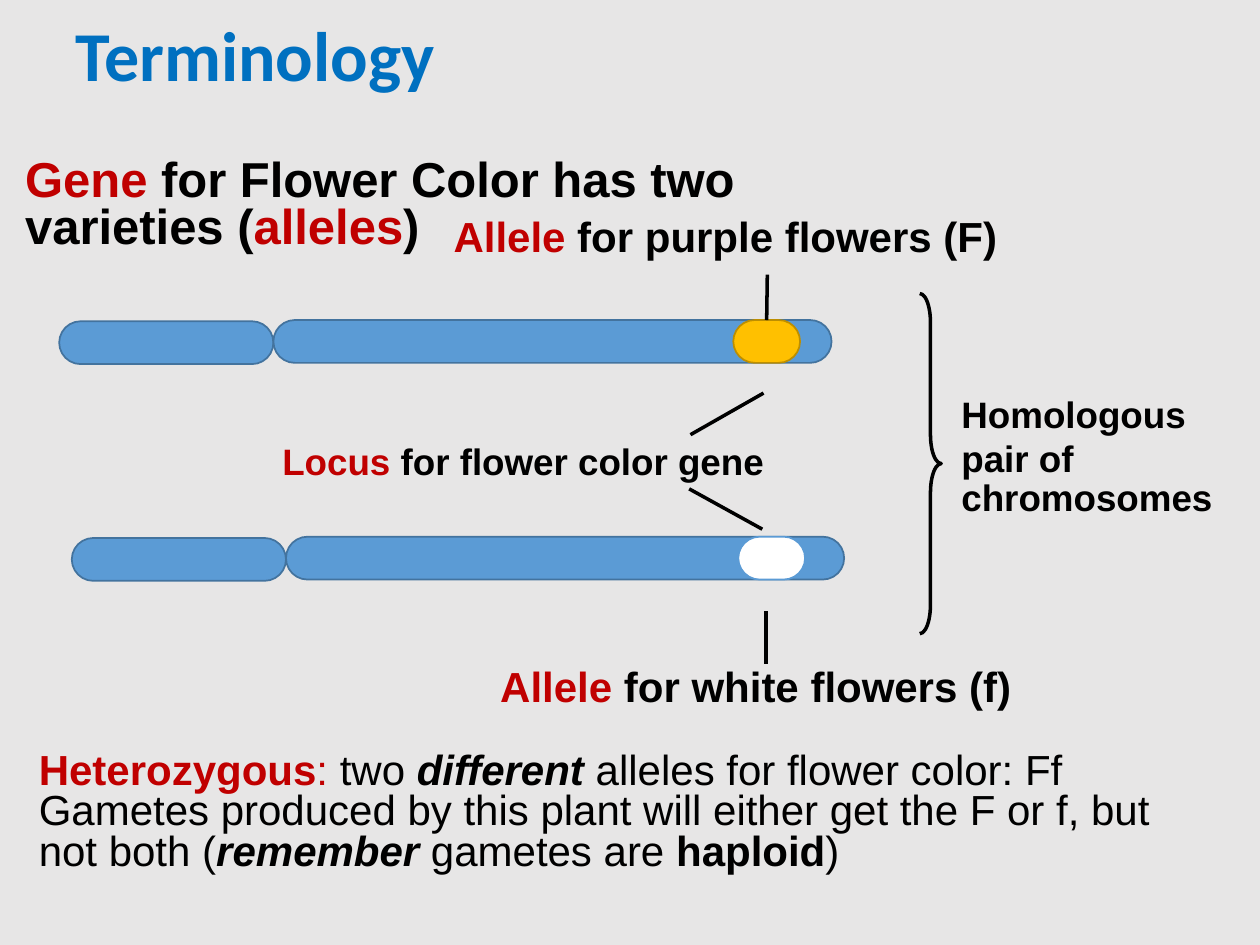
from lxml import etree
from pptx import Presentation
from pptx.dml.color import RGBColor
from pptx.enum.shapes import MSO_CONNECTOR, MSO_SHAPE
from pptx.enum.text import MSO_ANCHOR, MSO_AUTO_SIZE, PP_ALIGN
from pptx.oxml.ns import qn
from pptx.util import Inches, Pt

ROUNDED = MSO_SHAPE.ROUNDED_RECTANGLE
BRACE = MSO_SHAPE.RIGHT_BRACE
STRAIGHT = MSO_CONNECTOR.STRAIGHT
MIDDLE = MSO_ANCHOR.MIDDLE
NO_FIT = MSO_AUTO_SIZE.NONE
LEFT = PP_ALIGN.LEFT
TOP_SIDE = 0

BLACK, RED, BLUE = "000000", "C00000", "0070C0"
TITLE_ONLY = 5
BAR_HEIGHT = 0.34
LOCUS_WIDTH = 0.53


def color(hex_code):
    return RGBColor.from_string(hex_code)


def write(frame, paragraphs, size, font="Arial", bold=False, spacing=0.8):
    """Fill a frame; each paragraph lists (text, format) spans."""
    for index, spans in enumerate(paragraphs):
        para = frame.paragraphs[0] if index == 0 else frame.add_paragraph()
        para.alignment = LEFT
        para.line_spacing = spacing[index] if isinstance(spacing, list) else spacing
        for text, style in spans:
            span = para.add_run()
            span.text = text
            span.font.name = font
            span.font.size = Pt(size)
            span.font.bold = style.get("bold", bold)
            span.font.italic = style.get("italic", False)
            span.font.color.rgb = color(style.get("color", BLACK))


def add_text(page, box, paragraphs, size, inset=0, wrap=False, **style):
    frame = page.shapes.add_textbox(*map(Inches, box)).text_frame
    frame.word_wrap = wrap
    frame.margin_left = frame.margin_right = Inches(inset)
    frame.margin_top = frame.margin_bottom = Inches(inset / 2)
    write(frame, paragraphs, size, **style)


def add_label(page, box, key_word, rest, size):
    add_text(page, box, [[(key_word, {"color": RED}), (rest, {})]], size, bold=True)


def add_shape(page, kind, box, line, fill=None, width=1):
    shape = page.shapes.add_shape(kind, *map(Inches, box))
    shape.shadow.inherit = False
    if fill:
        shape.fill.solid()
        shape.fill.fore_color.rgb = color(fill)
    else:
        shape.fill.background()
    shape.line.color.rgb = color(line)
    shape.line.width = Pt(width)
    return shape


def add_line(page, start, end):
    line = page.shapes.add_connector(STRAIGHT, *map(Inches, start + end))
    line.line.color.rgb = color(BLACK)
    line.line.width = Pt(2)
    etree.SubElement(line._element.spPr, qn("a:effectLst"))
    return line


def add_title(page, box):
    title = page.shapes.title
    title.left, title.top, title.width, title.height = map(Inches, box)
    frame = title.text_frame
    frame.auto_size = NO_FIT
    frame.vertical_anchor = MIDDLE
    write(frame, [[("Terminology", {"color": BLUE})]], 40,
          font="Calibri", bold=True, spacing=0.9)


def add_chromosome(page, left, top, locus_left, locus_fill, locus_line):
    """Draw a short and a long arm with a locus; return the locus."""
    short_arm, long_arm = 1.7, 4.43
    parts = [
        (left, top + 0.01, short_arm, "5B9BD5", "43739E"),
        (left + short_arm, top, long_arm, "5B9BD5", "43739E"),
        (locus_left, top, LOCUS_WIDTH, locus_fill, locus_line),
    ]
    for x, y, width, fill, line in parts:
        shape = add_shape(page, ROUNDED, (x, y, width, BAR_HEIGHT), line, fill)
        shape.adjustments[0] = 0.5
    return shape


def add_diagram(page):
    # Chromosome pair
    purple_locus = add_chromosome(page, 0.47, 2.54, 5.82, "FFC000", "BD8E00")
    add_chromosome(page, 0.57, 4.26, 5.86, "FFFFFF", "5B9BD5")

    # Allele and locus labels
    add_label(page, (3.6, 1.75, 4.33, 0.48), "Allele", " for purple flowers (F)", 24)
    add_label(page, (2.24, 3.55, 3.89, 0.29), "Locus", " for flower color gene", 21)
    add_label(page, (3.97, 5.32, 4.22, 0.45), "Allele", " for white flowers (f)", 24)

    # Pointers from the labels
    add_line(page, (6.09, 2.18), (6.09, 2.54)).end_connect(purple_locus, TOP_SIDE)
    add_line(page, (5.48, 3.45), (6.06, 3.12))
    add_line(page, (5.47, 3.88), (6.05, 4.2))
    add_line(page, (6.08, 4.85), (6.08, 5.27))

    # Brace around the pair
    brace = add_shape(page, BRACE, (7.3, 2.33, 0.17, 2.7), BLACK, width=2)
    brace.adjustments[0] = 1.35
    brace.adjustments[1] = 0.5
    pair_lines = ["Homologous", "pair of", "chromosomes"]
    add_text(page, (7.63, 3.18, 2.01, 0.95), [[(text, {})] for text in pair_lines],
             21, bold=True, spacing=[0.8, 1.0, 0.9])


def add_heading(page, box):
    red = {"color": RED}
    spans = [("Gene", red), (" for Flower Color has two varieties (", {}),
             ("alleles", red), (")", {})]
    add_text(page, box, [spans], 28, bold=True)


def add_explanation(page, box):
    strong = {"bold": True, "italic": True}
    paragraphs = [
        [("Heterozygous", {"color": RED, "bold": True}), (": ", {"color": RED}),
         ("two ", {}), ("different", strong), (" alleles for flower color: Ff", {})],
        [("Gametes produced by this plant will either get the F or f, but not both (", {}),
         ("remember", strong), (" gametes are ", {}),
         ("haploid", {"bold": True}), (")", {})],
    ]
    add_text(page, box, paragraphs, 24, inset=0.1, wrap=True)


def main():
    deck = Presentation()
    deck.slide_width, deck.slide_height = Inches(10), Inches(7.5)
    page = deck.slides.add_slide(deck.slide_layouts[TITLE_ONLY])
    page.background.fill.solid()
    page.background.fill.fore_color.rgb = color("E7E6E6")

    add_title(page, (0.5, 0.05, 9, 0.84))
    add_heading(page, (0.2, 1.27, 7.27, 0.5))
    add_diagram(page)
    add_explanation(page, (0.21, 5.93, 9.4, 1.07))
    deck.save("out.pptx")


if __name__ == "__main__":
    main()
